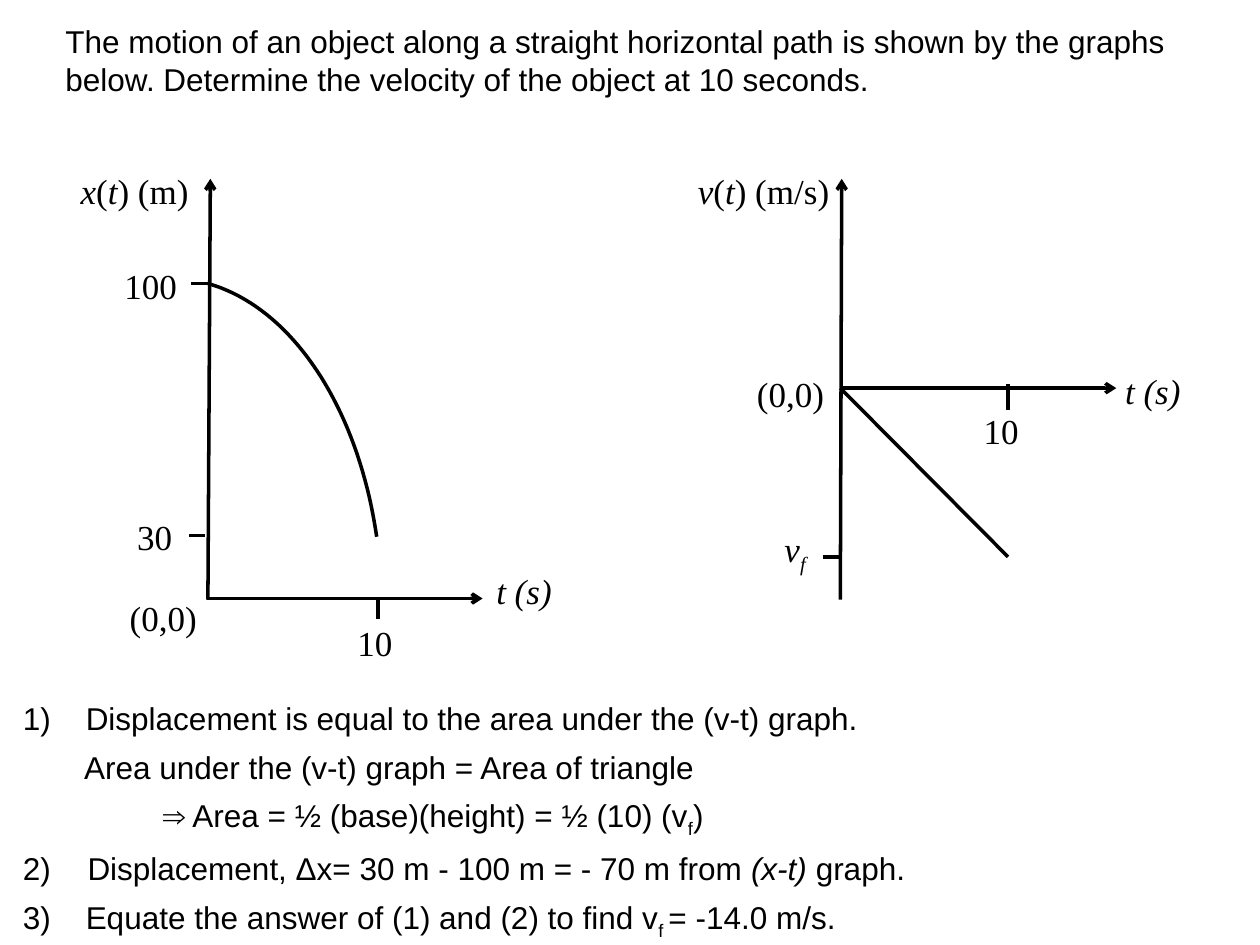
from pptx import Presentation
from pptx.dml.color import RGBColor
from pptx.enum.shapes import MSO_CONNECTOR
from pptx.enum.text import MSO_ANCHOR, MSO_AUTO_SIZE, PP_ALIGN
from pptx.oxml.ns import qn
from pptx.util import Pt
from lxml.etree import SubElement

COLORS = {"ink": "000000"}
SANS, SERIF = "Arial", "Times New Roman"

QUESTION = [("The motion of an object along a straight horizontal path is shown by the graphs "
             "below. Determine the velocity of the object at 10 seconds.", "")]
STEPS = [
    (1, 36, [("Displacement is equal to the area under the (v-t) graph.", "")]),
    (None, 35, [("Area under the (v-t) graph = Area of triangle", "")]),
    (None, 80, [("⇒ Area = ½ (base)(height) = ½ (10) (v", ""), ("f", "sub"), (")", "")]),
    (2, 37, [("Displacement, Δx= 30 m - 100 m = - 70 m from ", ""), ("(x-t) ", "i"), ("graph.", "")]),
    (3, 36, [("Equate the answer of (1) and (2) to find v", ""), ("f ", "sub"), ("= -14.0 m/s.", "")]),
]
LABELS = [
    (39, 90, 94, [("x", "i"), ("(", ""), ("t", "i"), (") (m)", "")]),
    (64, 144, 56, [("100", "")]),
    (71.3, 287.3, 48, [("30", "")]),
    (67, 334, 65, [("(0,0)", "")]),
    (197.2, 347.8, 42, [("10", "")]),
    (276.5, 318.2, 65, [("t (s)", "i")]),
    (391.7, 90, 112, [("v", "i"), ("(", ""), ("t", "i"), (") (m/s)", "")]),
    (425.5, 205.9, 61, [("(0,0)", "")]),
    (441.2, 293.8, 39, [("v", "i"), ("f", "i sub")]),
    (555, 226.8, 46, [("10", "")]),
    (635.8, 203.8, 54, [("t (s)", "i")]),
]
AXES = [
    (118.8, 342.7, 120.2, 102.2),
    (118.1, 342, 275.8, 342),
    (480.2, 342.7, 481, 102.2),
    (480.2, 221.8, 637.9, 221.8),
]
LINES = [
    (109.4, 162, 118.8, 162),
    (108, 306, 117.4, 306),
    (216, 353.5, 216, 342),
    (576, 234, 576, 219.6),
    (470.2, 318.2, 480.2, 318.2),
    (480.2, 221.8, 576, 318.2),
]
CURVE = [(118.8, 162), (167, 175.7), (204.5, 232.6), (215.3, 306.7)]
CURVE_STEPS = 40


def write(p, runs, font=SANS, size=18):
    for text, style in runs:
        r = p.add_run()
        r.text = text
        r.font.name = font
        r.font.size = Pt(size)
        r.font.italic = "i" in style.split()
        r.font.color.rgb = RGBColor.from_string(COLORS["ink"])
        if "sub" in style.split():
            r.font._element.set("baseline", "-25000")


def place(sp, left, top, width, height, anchor=MSO_ANCHOR.TOP):
    sp.left, sp.top, sp.width, sp.height = Pt(left), Pt(top), Pt(width), Pt(height)
    tf = sp.text_frame
    tf.word_wrap = True
    tf.auto_size = MSO_AUTO_SIZE.NONE
    tf.vertical_anchor = anchor
    return tf


def add_step(p, number, indent, runs):
    pPr = p._p.get_or_add_pPr()
    pPr.set("marL", str(Pt(indent)))
    pPr.set("indent", str(Pt(-indent if number else 0)))
    p.space_before, p.space_after = Pt(0), Pt(6)
    if number:
        SubElement(pPr, qn("a:buFont"), typeface=SANS)
        SubElement(pPr, qn("a:buAutoNum"), type="arabicParenR", startAt=str(number))
    else:
        SubElement(pPr, qn("a:buNone"))
    write(p, runs)


def style_line(sp):
    sp.line.color.rgb = RGBColor.from_string(COLORS["ink"])
    sp.line.width = Pt(2)


def add_line(s, ends, arrow=False):
    c = s.shapes.add_connector(MSO_CONNECTOR.STRAIGHT, *map(Pt, ends))
    style_line(c)
    if arrow:
        SubElement(c.line._get_or_add_ln(), qn("a:tailEnd"), type="arrow")
    SubElement(c._element.spPr, qn("a:effectLst"))


def bezier(t):
    weights = ((1 - t) ** 3, 3 * t * (1 - t) ** 2, 3 * t * t * (1 - t), t ** 3)
    return tuple(Pt(sum(w * pt[i] for w, pt in zip(weights, CURVE))) for i in (0, 1))


def add_curve(s):
    points = [bezier(n / CURVE_STEPS) for n in range(CURVE_STEPS + 1)]
    fb = s.shapes.build_freeform(*points[0])
    fb.add_line_segments(points[1:], close=False)
    sp = fb.convert_to_shape()
    sp.fill.background()
    sp.shadow.inherit = False
    style_line(sp)


def main():
    prs = Presentation()
    prs.slide_width, prs.slide_height = Pt(720), Pt(540)
    s = prs.slides.add_slide(prs.slide_layouts[1])
    title, body = s.placeholders

    p = place(title, 30.2, 8.6, 653.8, 51.1, MSO_ANCHOR.MIDDLE).paragraphs[0]
    p.alignment = PP_ALIGN.LEFT
    write(p, QUESTION)

    tf = place(body, 5.8, 396, 696.2, 140.4)
    for i, step in enumerate(STEPS):
        add_step(tf.add_paragraph() if i else tf.paragraphs[0], *step)

    for left, top, width, runs in LABELS:
        tf = place(s.shapes.add_textbox(0, 0, 0, 0), left, top, width, 36)
        tf.paragraphs[0].line_spacing = 1.15
        write(tf.paragraphs[0], runs, font=SERIF, size=20)

    for ends in AXES:
        add_line(s, ends, arrow=True)
    for ends in LINES:
        add_line(s, ends)
    add_curve(s)
    prs.save("out.pptx")


if __name__ == "__main__":
    main()
